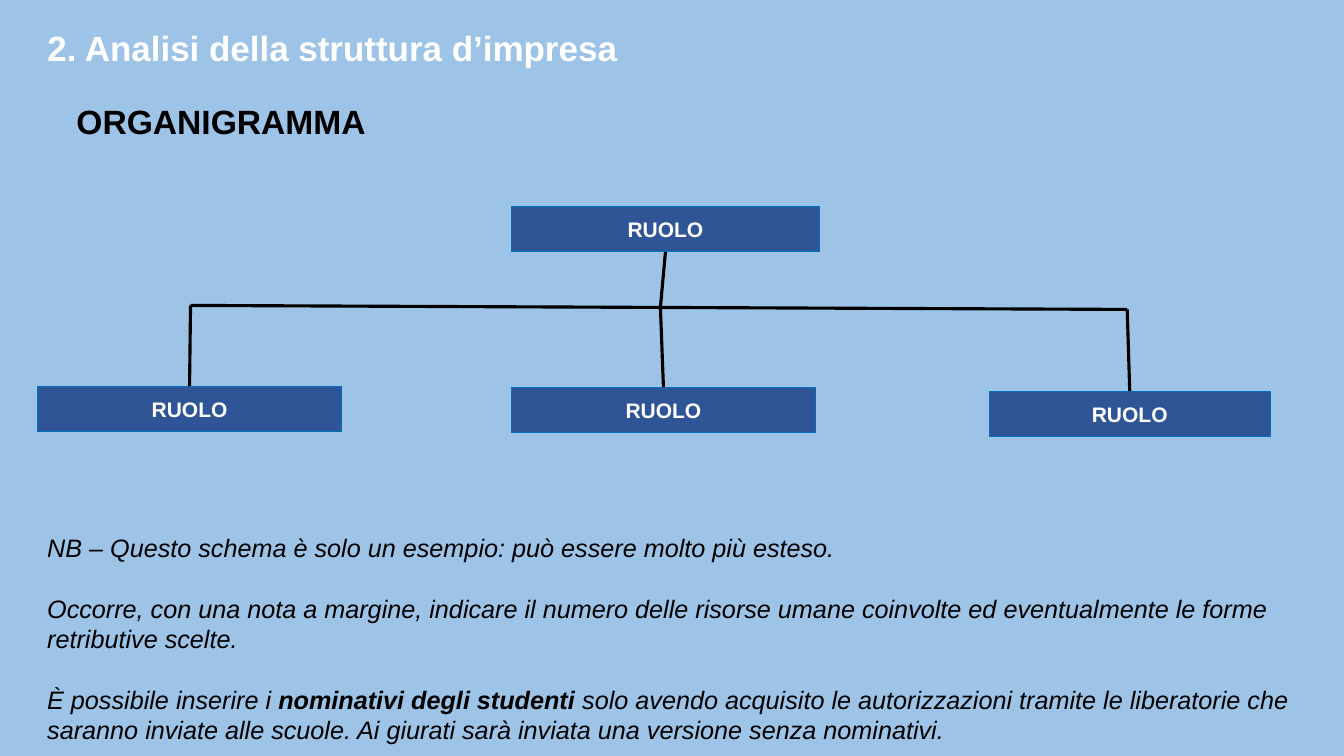
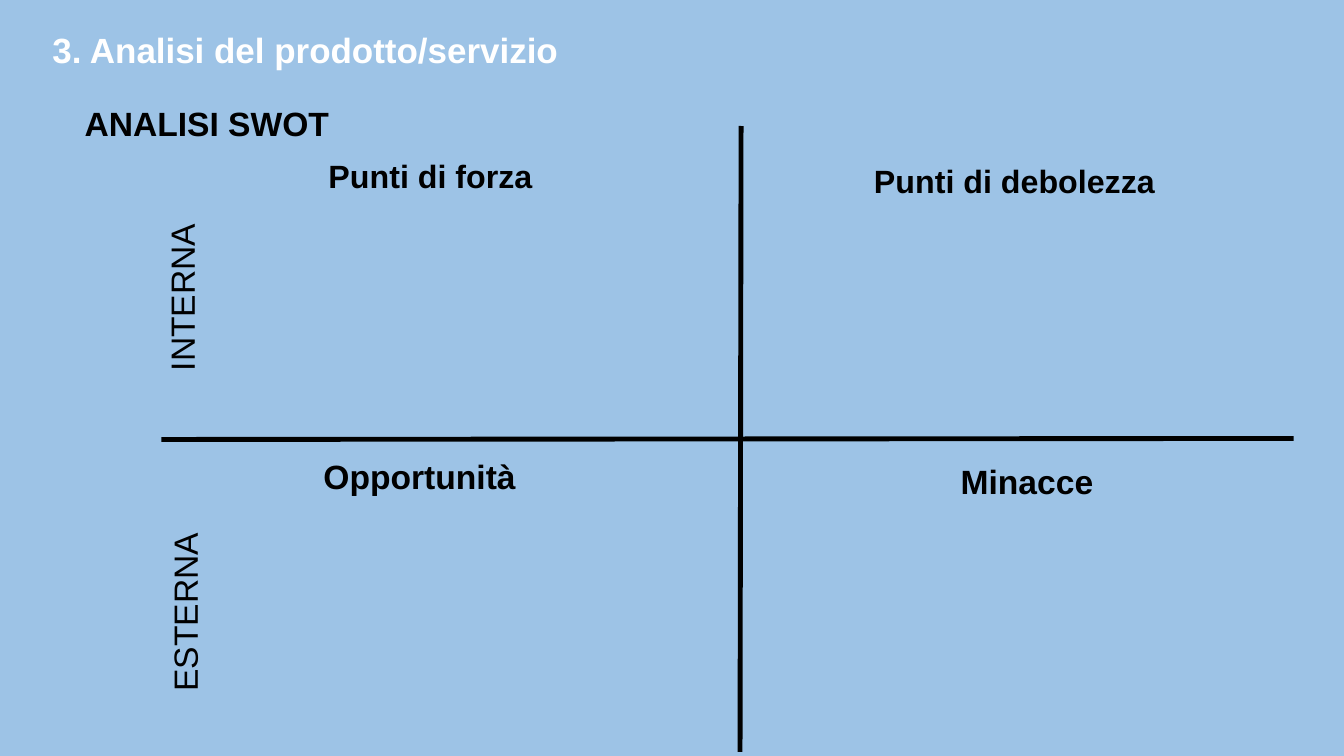
from dataclasses import dataclass
from lxml.etree import SubElement
from pptx import Presentation
from pptx.dml.color import RGBColor
from pptx.enum.shapes import MSO_CONNECTOR, MSO_SHAPE
from pptx.enum.text import MSO_ANCHOR, MSO_AUTO_SIZE, PP_ALIGN
from pptx.oxml.ns import qn
from pptx.util import Inches, Pt


@dataclass(frozen=True)
class Theme:
    font: str = "Arial"
    sky: str = "9DC3E6"
    navy: str = "2F5597"
    edge: str = "0070C0"
    ink: str = "000000"
    white: str = "FFFFFF"
    title: float = 25
    head: float = 24
    quad: float = 23
    note: float = 18
    role: float = 15
    lead: float = 21.7
    rim: float = 0.75
    link: float = 2.25
    axis: float = 3.5


THEME = Theme()

CHART = {
    "title": ("2. Analisi della struttura d’impresa", (0.37, 0.21, 8.43, 0.52)),
    "head": ("ORGANIGRAMMA", (0.66, 0.95, 11.23, 0.51)),
    "boss": ("RUOLO", (5.07, 2.05, 3.06, 0.45)),
    "staff": [
        ("RUOLO", (0.37, 3.83, 3.02, 0.45), (1.89, 3.03)),
        ("RUOLO", (5.07, 3.84, 3.02, 0.45), (6.55, 3.05)),
        ("RUOLO", (9.81, 3.88, 2.79, 0.45), (11.18, 3.07)),
    ],
    "hub": (6.55, 3.05),
    "area": (0.37, 5.23, 12.93, 2.25),
    "notes": [
        [("NB – Questo schema è solo un esempio: può essere molto più esteso.", False)],
        [("Occorre, con una nota a margine, indicare il numero delle risorse umane "
          "coinvolte ed eventualmente le forme retributive scelte.", False)],
        [("È possibile inserire i ", False),
         ("nominativi degli studenti ", True),
         ("solo avendo acquisito le autorizzazioni tramite le liberatorie che saranno "
          "inviate alle scuole. Ai giurati sarà inviata una versione senza nominativi.",
          False)],
    ],
}

SWOT = {
    "title": ("3. Analisi del prodotto/servizio", (0.42, 0.23, 8.43, 0.52)),
    "head": ("ANALISI SWOT", (0.74, 0.97, 3.73, 0.51)),
    "axes": [((7.35, 1.25), (7.34, 7.46)), ((1.6, 4.36), (12.83, 4.35))],
    "quads": [
        ("Punti di forza", (3.16, 1.5, 4, 0.5), THEME.quad),
        ("Punti di debolezza", (8.57, 1.55, 4, 0.5), THEME.quad),
        ("Opportunità", (3.11, 4.47, 4, 0.5), THEME.head),
        ("Minacce", (9.43, 4.52, 3.5, 0.5), THEME.head),
    ],
    "sides": [
        ("INTERNA", (0.77, 2.49, 2.07, 0.51)),
        ("ESTERNA", (0.81, 5.68, 2.05, 0.51)),
    ],
}


def apply(item, style):
    for name, value in style.items():
        setattr(item, name, value)


def place(item, spot):
    names = ("left", "top", "width", "height")
    apply(item, dict(zip(names, map(Inches, spot))))


def write(item, paras, size, color=THEME.ink, italic=False,
          align=PP_ALIGN.LEFT, anchor=MSO_ANCHOR.TOP, para=None):
    frame = item.text_frame
    apply(frame, {
        "word_wrap": True,
        "auto_size": MSO_AUTO_SIZE.NONE,
        "vertical_anchor": anchor,
        "margin_left": Inches(0.1),
        "margin_right": Inches(0.1),
        "margin_top": Inches(0.05),
        "margin_bottom": Inches(0.05),
    })
    for i, parts in enumerate(paras):
        line = frame.add_paragraph() if i else frame.paragraphs[0]
        apply(line, {"alignment": align, **(para or {})})
        for words, bold in parts:
            run = line.add_run()
            run.text = words
            apply(run.font, {"name": THEME.font, "size": Pt(size),
                             "bold": bold, "italic": italic})
            run.font.color.rgb = RGBColor.from_string(color)


def add_text(slide, spot, paras, size, **style):
    box = slide.shapes.add_textbox(*map(Inches, spot))
    write(box, paras, size, **style)
    return box


def add_line(slide, start, end, width):
    line = slide.shapes.add_connector(
        MSO_CONNECTOR.STRAIGHT, *map(Inches, (*start, *end)))
    line.line.color.rgb = RGBColor.from_string(THEME.ink)
    line.line.width = Pt(width)
    SubElement(line.element.spPr, qn("a:effectLst"))
    return line


def add_role(slide, text, spot):
    box = slide.shapes.add_shape(MSO_SHAPE.RECTANGLE, *map(Inches, spot))
    box.shadow.inherit = False
    box.fill.solid()
    box.fill.fore_color.rgb = RGBColor.from_string(THEME.navy)
    box.line.color.rgb = RGBColor.from_string(THEME.edge)
    box.line.width = Pt(THEME.rim)
    write(box, [[(text, True)]], THEME.role, color=THEME.white,
          align=PP_ALIGN.CENTER, anchor=MSO_ANCHOR.MIDDLE)
    return box


def add_page(deck, data):
    slide = deck.slides.add_slide(deck.slide_layouts[5])
    text, spot = data["title"]
    title = slide.shapes.title
    place(title, spot)
    write(title, [[(text, True)]], THEME.title, color=THEME.white)
    text, spot = data["head"]
    add_text(slide, spot, [[(text, True)]], THEME.head)
    return slide


def draw_chart(deck):
    slide = add_page(deck, CHART)
    hub = CHART["hub"]
    boss = add_role(slide, *CHART["boss"])
    add_line(slide, hub, hub, THEME.link).begin_connect(boss, 2)
    for text, spot, bend in CHART["staff"]:
        box = add_role(slide, text, spot)
        add_line(slide, bend, bend, THEME.link).end_connect(box, 0)
        if bend != hub:
            add_line(slide, hub, bend, THEME.link)
    gap = Pt(THEME.lead)
    add_text(slide, CHART["area"], CHART["notes"], THEME.note, italic=True,
             para={"line_spacing": gap, "space_after": gap})


def draw_swot(deck):
    slide = add_page(deck, SWOT)
    for start, end in SWOT["axes"]:
        add_line(slide, start, end, THEME.axis)
    for text, spot, size in SWOT["quads"]:
        add_text(slide, spot, [[(text, True)]], size)
    for text, spot in SWOT["sides"]:
        add_text(slide, spot, [[(text, False)]], THEME.head).rotation = 270


def main():
    deck = Presentation()
    apply(deck, {"slide_width": Inches(13.33), "slide_height": Inches(7.5)})
    fill = deck.slide_master.background.fill
    fill.solid()
    fill.fore_color.rgb = RGBColor.from_string(THEME.sky)
    draw_chart(deck)
    draw_swot(deck)
    deck.save("out.pptx")


if __name__ == "__main__":
    main()
